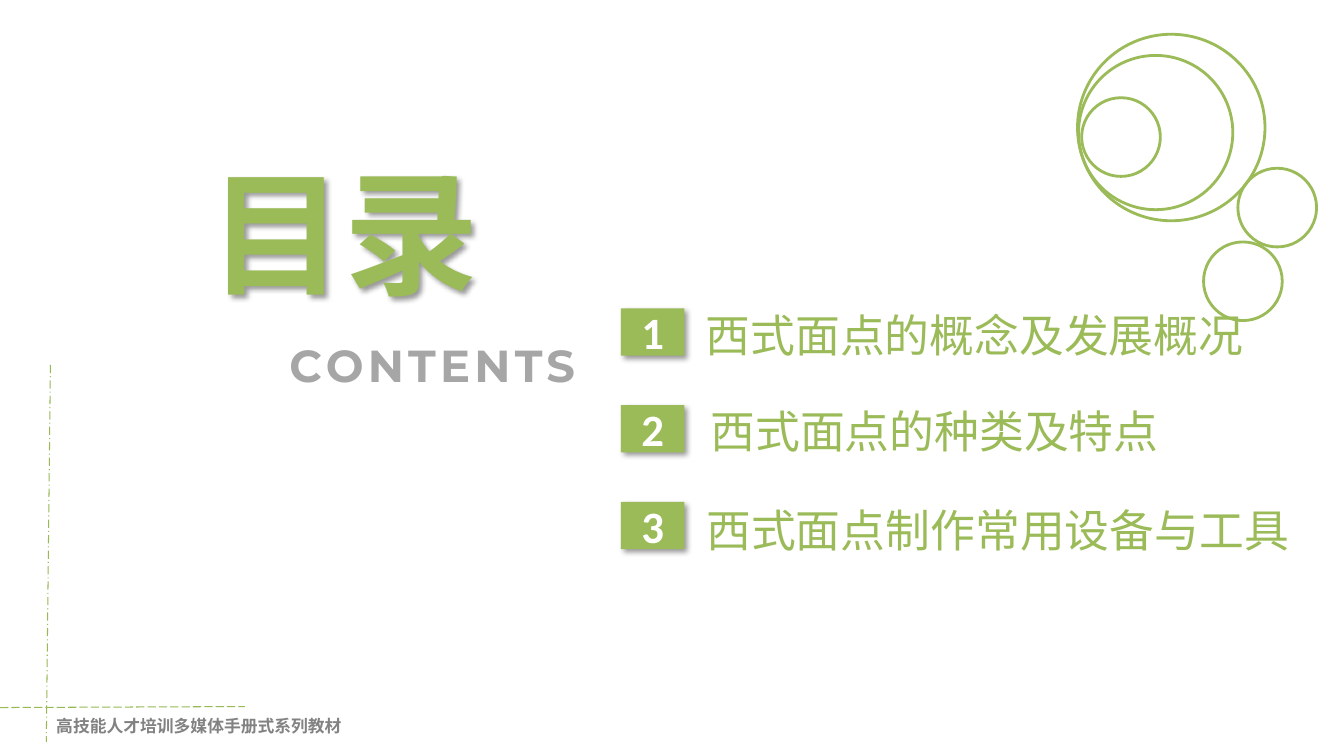
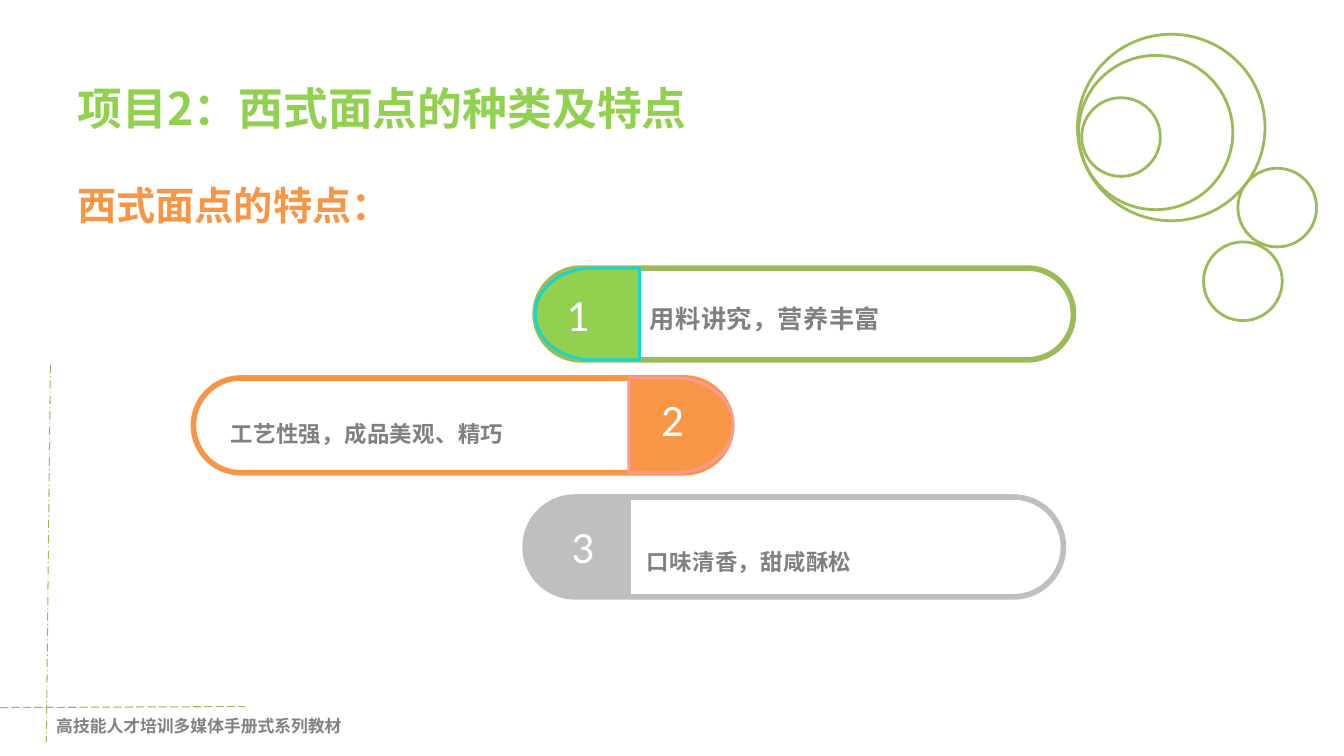
import math

import pptx
import pptx.dml.color
import pptx.enum.dml
import pptx.enum.shapes
import pptx.enum.text
import pptx.oxml
import pptx.oxml.ns
import pptx.util

Pt = pptx.util.Pt
RGB = pptx.dml.color.RGBColor
ALIGN = pptx.enum.text.PP_ALIGN
ANCHOR = pptx.enum.text.MSO_ANCHOR
SHAPE = pptx.enum.shapes.MSO_SHAPE
DASH = pptx.enum.dml.MSO_LINE
qn = pptx.oxml.ns.qn

GREEN = RGB(0x9B, 0xBB, 0x59)
GUIDE_GREEN = RGB(0x98, 0xB9, 0x55)
BRIGHT_GREEN = RGB(0x92, 0xD0, 0x50)
TURQUOISE = RGB(0x16, 0xD4, 0xCF)
ORANGE = RGB(0xF7, 0x96, 0x46)
PINK = RGB(0xFF, 0x99, 0x99)
SILVER = RGB(0xBF, 0xBF, 0xBF)
LIGHT_GRAY = RGB(0xA6, 0xA6, 0xA6)
TEXT_GRAY = RGB(0x80, 0x80, 0x80)
FOOTER_GRAY = RGB(0x82, 0x82, 0x82)
WHITE = RGB(0xFF, 0xFF, 0xFF)
CJK = "Noto Sans CJK SC"

FOOTER = "高技能人才培训多媒体手册式系列教材"
GUIDES = [
    ((36, 260.6), (33.1, 529.9), DASH.LONG_DASH_DOT),
    ((0, 505.4), (175, 504.7), DASH.LONG_DASH),
]
RINGS = [
    (769.7, 24.5, 133.9, 133.2),
    (770.4, 39.6, 110.2, 110.2),
    (884.2, 120.2, 56.2, 56.2),
    (772.6, 69.8, 56.2, 56.2),
    (859.7, 172.8, 56.2, 56.2),
]

TOPICS = [
    ("西式面点的概念及发展概况", (496.8, 201.6, 403.2, 74.2)),
    ("西式面点的种类及特点", (500.4, 270.7, 340.6, 74.2)),
    ("西式面点制作常用设备与工具", (497.5, 341.3, 442.1, 74.2)),
]
BADGE_LEFT, BADGE_TOP, BADGE_PITCH = 443.5, 220.3, 69.1
BADGE_WIDTH, BADGE_HEIGHT = 45.4, 33.8

PILL_WIDTH, CAP_WIDTH, CAP_RADIUS = 384.5, 74.5, 41
FEATURES = [
    dict(label="用料讲究，营养丰富", size=18, spacing=1.5, label_at=(457.2, 202.3),
         pill=(382.3, 191.5, 65.5), cap_on_left=True, number_at=(397.4, 201.6),
         border=GREEN, cap_fill=BRIGHT_GREEN, cap_line=TURQUOISE),
    dict(label="工艺性强，成品美观、精巧", size=16, spacing=1.5, label_at=(157.7, 287.3),
         pill=(138.2, 270, 67.7), cap_on_left=False, number_at=(465.1, 276.5),
         border=ORANGE, cap_fill=ORANGE, cap_line=PINK),
    dict(label="口味清香，甜咸酥松", size=16, spacing=1.3, label_at=(455, 382.3),
         pill=(375.1, 355, 71.3), cap_on_left=True, number_at=(401, 367.2),
         border=SILVER, cap_fill=SILVER, cap_line=SILVER),
]


def points(lengths):
    return [Pt(length) for length in lengths]


def write(holder, text, size, color, font=CJK, bold=False, align=ALIGN.LEFT,
          anchor=ANCHOR.TOP, tracking=0, spacing=None, wrap=True):
    frame = holder.text_frame
    frame.text = text
    frame.word_wrap = wrap
    frame.vertical_anchor = anchor
    paragraph = frame.paragraphs[0]
    paragraph.alignment = align
    if spacing:
        paragraph.line_spacing = spacing
    run = paragraph.runs[0]
    run.font.size = Pt(size)
    run.font.bold = bold
    run.font.name = font
    run.font.color.rgb = color
    properties = run.font._element
    if tracking:
        properties.set("spc", str(round(tracking * 100)))
    east_asian = pptx.oxml.parse_xml(
        f'<a:ea {pptx.oxml.ns.nsdecls("a")} typeface="{CJK}"/>')
    properties.find(qn("a:latin")).addnext(east_asian)


def add_text(slide, box, text, size, color, **style):
    holder = slide.shapes.add_textbox(*points(box))
    write(holder, text, size, color, **style)
    return holder


def set_title(slide, box, text, color, bold=False):
    title = slide.shapes.title
    title.left, title.top, title.width, title.height = points(box)
    write(title, text, 32, color, bold=bold, anchor=ANCHOR.MIDDLE)


def paint(shape, fill=None, line=None, width=1):
    shape.shadow.inherit = False
    if fill is None:
        shape.fill.background()
    else:
        shape.fill.solid()
        shape.fill.fore_color.rgb = fill
    if line is None:
        shape.line.fill.background()
    else:
        shape.line.color.rgb = line
        shape.line.width = Pt(width)


def cast_shadow(shape):
    shape.shadow.inherit = False
    effects = shape._element.spPr.find(qn("a:effectLst"))
    effects.append(pptx.oxml.parse_xml(
        f'<a:outerShdw {pptx.oxml.ns.nsdecls("a")} blurRad="{Pt(4)}" dist="{Pt(3)}" '
        'dir="2700000" algn="tl" rotWithShape="0"><a:srgbClr val="000000">'
        '<a:alpha val="40000"/></a:srgbClr></a:outerShdw>'))


def add_themed_slide(deck):
    slide = deck.slides.add_slide(deck.slide_layouts[5])
    for start, end, dash in GUIDES:
        guide = slide.shapes.add_connector(
            pptx.enum.shapes.MSO_CONNECTOR.STRAIGHT, *points(start + end))
        guide.line.color.rgb = GUIDE_GREEN
        guide.line.width = Pt(0.75)
        guide.line.dash_style = dash
        guide._element.spPr.append(pptx.oxml.parse_xml(
            f'<a:effectLst {pptx.oxml.ns.nsdecls("a")}/>'))
    add_text(slide, (33.1, 507.6, 220.3, 21.6), FOOTER, 12, FOOTER_GRAY,
             font="Times New Roman", bold=True, wrap=False)
    for box in RINGS:
        ring = slide.shapes.add_shape(SHAPE.OVAL, *points(box))
        paint(ring, line=GREEN, width=2)
    return slide


def build_contents(deck):
    slide = add_themed_slide(deck)
    add_text(slide, (141.1, 237.6, 335.5, 46.1), "CONTENTS", 32, LIGHT_GRAY,
             font="Montserrat", bold=True, align=ALIGN.CENTER, tracking=3)
    heading = add_text(slide, (96.5, 103.7, 298.8, 123.8), "目录", 96, GREEN,
                       bold=True, align=ALIGN.CENTER)
    cast_shadow(heading)
    for index, (topic, box) in enumerate(TOPICS):
        if index == 0:
            set_title(slide, box, topic, GREEN)
        else:
            add_text(slide, box, topic, 32, GREEN, anchor=ANCHOR.MIDDLE)
        badge = slide.shapes.add_shape(SHAPE.RECTANGLE, *points(
            (BADGE_LEFT, BADGE_TOP + index * BADGE_PITCH, BADGE_WIDTH, BADGE_HEIGHT)))
        paint(badge, fill=GREEN)
        cast_shadow(badge)
        write(badge, str(index + 1), 32, WHITE, font="Calibri", bold=True,
              align=ALIGN.CENTER, anchor=ANCHOR.MIDDLE)


def add_cap(slide, feature):
    left, top, height = feature["pill"]
    outer, inward = (left, 1) if feature["cap_on_left"] else (left + PILL_WIDTH + 1, -1)
    middle = top + height / 2
    outline = [(outer + inward * CAP_WIDTH, top)]
    for degrees in range(0, 181, 5):
        angle = math.radians(degrees)
        outline.append((outer + inward * CAP_RADIUS * (1 - math.sin(angle)),
                        middle - height / 2 * math.cos(angle)))
    outline.append((outer + inward * CAP_WIDTH, top + height))
    corners = [tuple(points(corner)) for corner in outline]
    builder = slide.shapes.build_freeform(*corners[0])
    builder.add_line_segments(corners[1:], close=True)
    paint(builder.convert_to_shape(), fill=feature["cap_fill"],
          line=feature["cap_line"], width=2)


def build_features(deck):
    slide = add_themed_slide(deck)
    set_title(slide, (48.2, 39.6, 864, 74.2), "项目2：西式面点的种类及特点",
              BRIGHT_GREEN, bold=True)
    add_text(slide, (48.2, 126, 864, 46), "西式面点的特点：", 28, ORANGE, bold=True)
    for number, feature in enumerate(FEATURES, 1):
        left, top, height = feature["pill"]
        pill = slide.shapes.add_shape(
            SHAPE.ROUNDED_RECTANGLE, *points((left, top, PILL_WIDTH, height)))
        pill.adjustments[0] = 0.5
        paint(pill, line=feature["border"], width=4)
        add_cap(slide, feature)
        add_text(slide, feature["number_at"] + (44.6, 46.1), str(number), 32, WHITE,
                 font="Calibri")
        add_text(slide, feature["label_at"] + (283.7, 40), feature["label"],
                 feature["size"], TEXT_GRAY, font="Arial", bold=True,
                 tracking=0.3, spacing=feature["spacing"])


def main():
    deck = pptx.Presentation()
    deck.slide_width, deck.slide_height = Pt(960), Pt(540)
    build_contents(deck)
    build_features(deck)
    deck.save("out.pptx")


if __name__ == "__main__":
    main()
